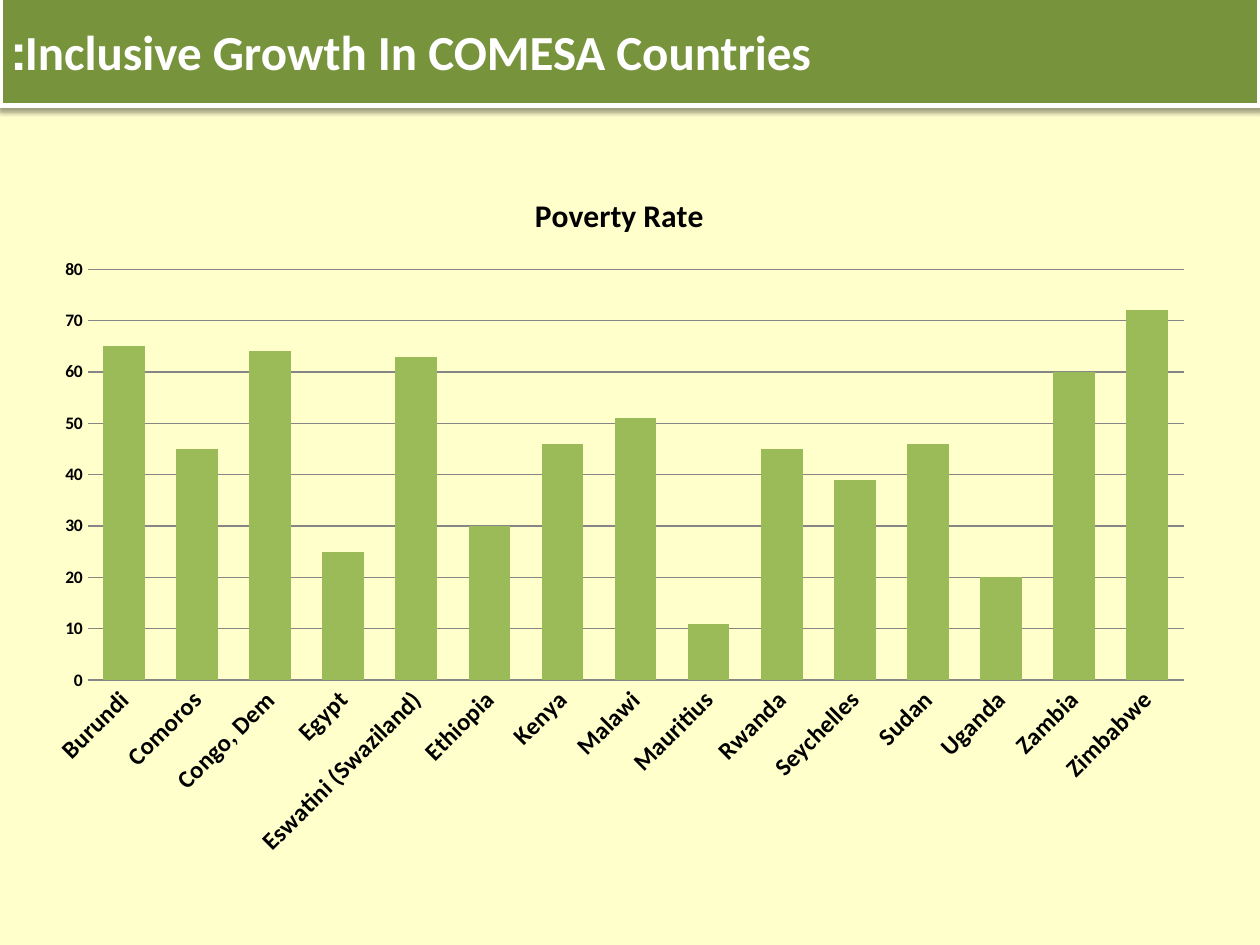
from lxml import etree
from pptx import Presentation
from pptx import util as u
from pptx.chart.data import CategoryChartData
from pptx.dml.color import RGBColor
from pptx.enum import chart as c, text as t
from pptx.oxml import parse_xml
from pptx.oxml.ns import nsdecls


def color(value):
    return RGBColor.from_string(value)


def write(frame, words, size, fill, bold=True, font="Calibri"):
    """Put one formatted run in the frame and return its paragraph."""
    paragraph = frame.paragraphs[0]
    run = paragraph.add_run()
    run.text = words
    run.font.size, run.font.bold, run.font.name = u.Pt(size), bold, font
    run.font.color.rgb = color(fill)
    return paragraph


presentation = Presentation()
presentation.slide_width, presentation.slide_height = u.Inches(10), u.Inches(7.5)
slide = presentation.slides.add_slide(presentation.slide_layouts[5])
slide.background.fill.solid()
slide.background.fill.fore_color.rgb = color("FFFFCC")

# Title band
title = slide.shapes.title
title.left, title.top = u.Inches(0), u.Inches(-0.03)
title.width, title.height = presentation.slide_width, u.Inches(0.87)
title.fill.solid()
title.fill.fore_color.rgb = color("77933C")
title.line.color.rgb = color("FFFFFF")
title.line.width = u.Pt(3)
title.text_frame.vertical_anchor = t.MSO_ANCHOR.MIDDLE
title.text_frame.word_wrap = True
heading = write(title.text_frame, "Inclusive Growth In COMESA Countries:", 28, "FFFFFF")
heading.alignment = t.PP_ALIGN.LEFT
heading._p.get_or_add_pPr().set("rtl", "1")
title._element.spPr.append(parse_xml(
    f'<a:effectLst {nsdecls("a")}><a:outerShdw blurRad="40000" dist="20000" dir="5400000" '
    'rotWithShape="0"><a:srgbClr val="000000"><a:alpha val="38000"/></a:srgbClr>'
    '</a:outerShdw></a:effectLst>'))

# Poverty chart
poverty = {
    "Burundi": 65, "Comoros": 45, "Congo, Dem": 64, "Egypt": 25,
    "Eswatini (Swaziland)": 63, "Ethiopia": 30, "Kenya": 46, "Malawi": 51,
    "Mauritius": 11, "Rwanda": 45, "Seychelles": 39, "Sudan": 46,
    "Uganda": 20, "Zambia": 60, "Zimbabwe": 72,
}
data = CategoryChartData()
data.categories = list(poverty)
data.add_series("Series 1", list(poverty.values()))
chart = slide.shapes.add_chart(
    c.XL_CHART_TYPE.COLUMN_CLUSTERED, u.Inches(0.25), u.Inches(1.33),
    u.Inches(9.33), u.Inches(5.58), data).chart
chart.has_legend = False
chart.font.name, chart.font.size = "Calibri", u.Pt(10)
chart.font.color.rgb = color("000000")
chart.has_title = True
write(chart.chart_title.text_frame, "Poverty Rate", 18, "000000")
chart.chart_title.include_in_layout = False

plot = chart.plots[0]
plot.gap_width, plot.overlap, plot.vary_by_categories = 75, -25, False
bars = plot.series[0].format.fill
bars.solid()
bars.fore_color.rgb = color("9BBB59")

for axis, size in ((chart.category_axis, 14), (chart.value_axis, 10)):
    axis.major_tick_mark = axis.minor_tick_mark = c.XL_TICK_MARK.NONE
    font = axis.tick_labels.font
    font.name, font.size, font.bold = "Calibri", u.Pt(size), True
    font.color.rgb = color("000000")

chart.category_axis.format.line.color.rgb = color("868686")
slant = chart.category_axis._element.txPr.bodyPr
slant.set("rot", str(-45 * 60000))
slant.set("vert", "horz")

values = chart.value_axis
values.minimum_scale, values.maximum_scale, values.major_unit = 0, 80, 10
values.format.line.fill.background()
values.has_major_gridlines = True
values.major_gridlines.format.line.color.rgb = color("868686")
values.major_gridlines.format.line.width = u.Pt(0.75)

presentation.save("out.pptx")
